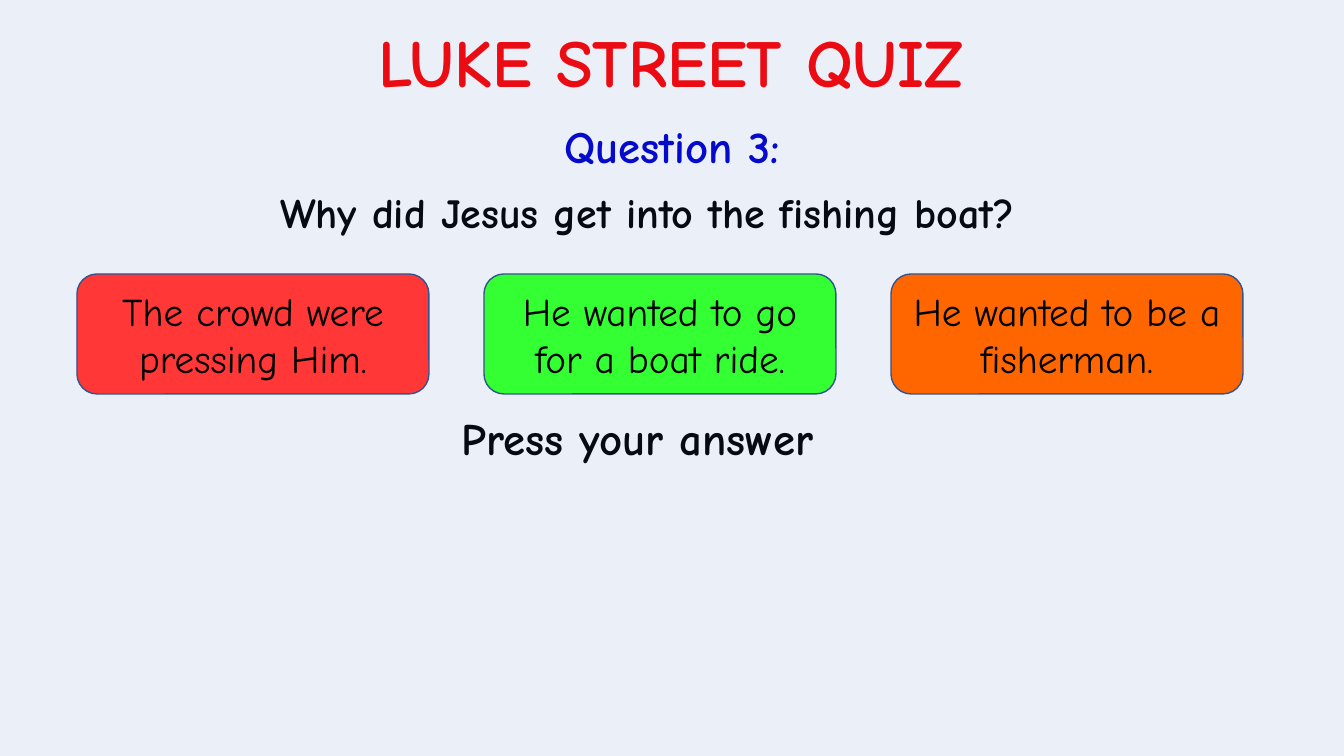
from lxml import etree
from pptx import Presentation
from pptx.dml.color import RGBColor
from pptx.enum.shapes import MSO_SHAPE as Shape
from pptx.enum.text import MSO_ANCHOR as Anchor, MSO_AUTO_SIZE as AutoSize, PP_ALIGN as Align
from pptx.oxml.ns import qn
from pptx.util import Pt

RED = RGBColor(0xFF, 0x00, 0x00)
BLUE = RGBColor(0x00, 0x00, 0xCC)
BLACK = RGBColor(0x00, 0x00, 0x00)
VEIL_BLUE = RGBColor(0x44, 0x72, 0xC4)
EDGE_BLUE = RGBColor(0x32, 0x54, 0x91)
FONT = "Comic Neue"

TITLE = "LUKE STREET QUIZ"
NUMBER = "Question 3:"
QUESTION = "Why did Jesus get into the fishing boat?"
PROMPT = "Press your answer"
ANSWERS = [
    ("The crowd were pressing Him.", RGBColor(0xFF, 0x37, 0x37)),
    ("He wanted to go for a boat ride.", RGBColor(0x33, 0xFF, 0x33)),
    ("He wanted to be a fisherman.", RGBColor(0xFF, 0x66, 0x00)),
]

# Boxes in px: left, top, width, height
SLIDE_SIZE = (1344, 756)
TITLE_BOX = (314, 15, 714, 92)
NUMBER_BOX = (450, 114, 445, 65)
QUESTION_BOX = (52, 190, 1191, 73)
PROMPT_BOX = (452, 412, 678, 73)
VEIL_BOX = (-24, -45, 1430, 880)
ANSWER_BOX = (77, 274, 352, 120)
ANSWER_STEP = 407
VEIL_OPACITY = 10


def px(*lengths):
    return [round(length * 12192000 / 1344) for length in lengths]


def place(shape, box):
    shape.left, shape.top, shape.width, shape.height = px(*box)


def write(shape, text, size, color, bold=True, align=Align.CENTER, anchor=Anchor.TOP):
    """Put one formatted run in the shape and return its paragraph."""
    frame = shape.text_frame
    frame.auto_size = AutoSize.NONE
    frame.word_wrap = True
    frame.vertical_anchor = anchor
    paragraph = frame.paragraphs[0]
    paragraph.alignment = align
    run = paragraph.add_run()
    run.text = text
    run.font.name = FONT
    run.font.size = Pt(size)
    run.font.bold = bold
    run.font.color.rgb = color
    return paragraph


def add_panel(slide, kind, box, fill):
    panel = slide.shapes.add_shape(kind, *px(*box))
    panel.shadow.inherit = False
    panel.fill.solid()
    panel.fill.fore_color.rgb = fill
    panel.line.color.rgb = EDGE_BLUE
    panel.line.width = Pt(1)
    return panel


def main():
    deck = Presentation()
    deck.slide_width, deck.slide_height = px(*SLIDE_SIZE)
    slide = deck.slides.add_slide(deck.slide_layouts[1])

    title = slide.shapes.title
    place(title, TITLE_BOX)
    write(title, TITLE, 48, RED)
    title.text_frame.word_wrap = False

    question = slide.placeholders[1]
    place(question, QUESTION_BOX)
    question_line = write(question, QUESTION, 30, BLACK)
    question_line.line_spacing = Pt(30)
    question_line.space_before = Pt(10)
    properties = question_line._p.get_or_add_pPr()
    properties.set("marL", "0")
    properties.set("indent", "0")
    etree.SubElement(properties, qn("a:buNone"))

    prompt = slide.shapes.add_textbox(*px(*PROMPT_BOX))
    prompt_line = write(prompt, PROMPT, 32, BLACK, align=Align.LEFT)
    prompt_line.line_spacing = 0.9
    prompt_line.space_before = Pt(7.5)

    number = slide.shapes.add_textbox(*px(*NUMBER_BOX))
    write(number, NUMBER, 32, BLUE)

    veil = add_panel(slide, Shape.RECTANGLE, VEIL_BOX, VEIL_BLUE)
    veil_color = veil.fill._xPr.find(qn("a:solidFill"))[0]
    etree.SubElement(veil_color, qn("a:alpha"), val=str(VEIL_OPACITY * 1000))

    left, top, width, height = ANSWER_BOX
    for column, (text, fill) in enumerate(ANSWERS):
        box = (left + column * ANSWER_STEP, top, width, height)
        answer = add_panel(slide, Shape.ROUNDED_RECTANGLE, box, fill)
        write(answer, text, 28, BLACK, bold=False, anchor=Anchor.MIDDLE)

    deck.save("out.pptx")


if __name__ == "__main__":
    main()
